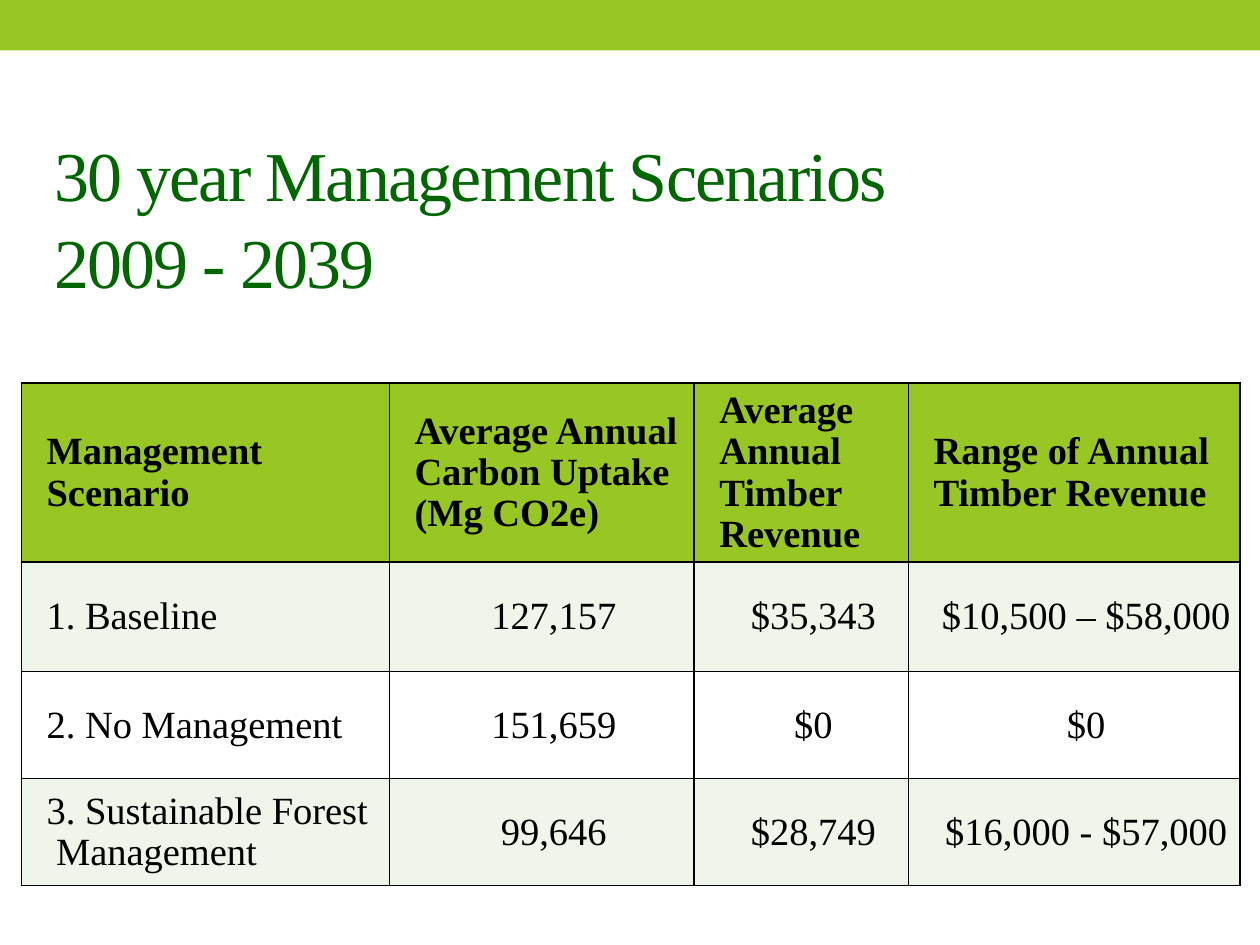
from dataclasses import dataclass

from lxml import etree
from pptx import Presentation
from pptx.dml.color import RGBColor
from pptx.enum import shapes, text
from pptx.oxml import ns
from pptx.util import Inches, Pt

GREEN = RGBColor(0x98, 0xC7, 0x23)
DARK = RGBColor(0x00, 0x66, 0x00)
PALE = RGBColor(0xEF, 0xF5, 0xE8)
WHITE = RGBColor(0xFF, 0xFF, 0xFF)
BLACK = RGBColor(0x00, 0x00, 0x00)
FONT = "Times New Roman"
WIDTHS = (2.92, 2.42, 1.7, 2.63)


@dataclass
class Row:
    height: float
    fill: RGBColor
    cells: tuple[str, ...]
    head: bool = False


ROWS = (
    Row(1.42, GREEN, (
        "Management Scenario",
        "Average Annual Carbon Uptake (Mg CO2e)",
        "Average Annual Timber Revenue",
        "Range of Annual Timber Revenue",
    ), True),
    Row(0.87, PALE, ("1. Baseline", "127,157", "$35,343", "$10,500 – $58,000")),
    Row(0.85, WHITE, ("2. No Management", "151,659", "$0", "$0")),
    Row(0.85, PALE, ("3. Sustainable Forest\v Management", "99,646", "$28,749",
                     "$16,000 - $57,000")),
)


def style(frame, size: float, color: RGBColor, bold: bool, pitch: float) -> None:
    for para in frame.paragraphs:
        para.line_spacing = pitch
        for run in para.runs:
            run.font.name = FONT
            run.font.size = Pt(size)
            run.font.bold = bold
            run.font.color.rgb = color


def add_band(slide) -> None:
    band = slide.shapes.add_shape(
        shapes.MSO_SHAPE.RECTANGLE, 0, 0, Inches(10), Inches(0.4))
    band.shadow.inherit = False
    band.fill.solid()
    band.fill.fore_color.rgb = GREEN
    band.line.fill.background()


def add_title(slide) -> None:
    title = slide.shapes.title
    title.left, title.top = Inches(0.33), Inches(1.17)
    title.width, title.height = Inches(9), Inches(1.08)
    frame = title.text_frame
    frame.text = "30 year Management Scenarios\v2009 - 2039"
    frame.vertical_anchor = text.MSO_ANCHOR.MIDDLE
    frame.auto_size = text.MSO_AUTO_SIZE.NONE
    style(frame, 40, DARK, False, 1.04)
    para = frame.paragraphs[0]
    para.alignment = text.PP_ALIGN.LEFT
    for run in para.runs:
        run.font._element.set("spc", "-100")


def add_edges(cell) -> None:
    props = cell._tc.get_or_add_tcPr()
    for side in ("lnL", "lnR", "lnT", "lnB"):
        line = etree.SubElement(props, ns.qn(f"a:{side}"), w=str(Pt(1)))
        fill = etree.SubElement(line, ns.qn("a:solidFill"))
        etree.SubElement(fill, ns.qn("a:srgbClr"), val=str(BLACK))


def fill_cell(cell, words: str, row: Row, center: bool) -> None:
    add_edges(cell)
    cell.fill.solid()
    cell.fill.fore_color.rgb = row.fill
    cell.margin_left = Inches(0.2)
    cell.margin_right = cell.margin_top = Inches(0.01)
    cell.margin_bottom = 0
    cell.vertical_anchor = text.MSO_ANCHOR.MIDDLE
    frame = cell.text_frame
    frame.text = words
    style(frame, 22, BLACK, row.head, 0.97)
    frame.paragraphs[0].alignment = (
        text.PP_ALIGN.CENTER if center else text.PP_ALIGN.LEFT)


def add_grid(slide) -> None:
    height = sum(row.height for row in ROWS)
    grid = slide.shapes.add_table(
        len(ROWS), len(WIDTHS), Inches(0.17), Inches(3.04),
        Inches(sum(WIDTHS)), Inches(height)).table
    for col, width in zip(grid.columns, WIDTHS):
        col.width = Inches(width)
    for i, row in enumerate(ROWS):
        grid.rows[i].height = Inches(row.height)
        for j, words in enumerate(row.cells):
            fill_cell(grid.cell(i, j), words, row, j > 0 and not row.head)


def main() -> None:
    deck = Presentation()
    deck.slide_width, deck.slide_height = Inches(10), Inches(7.5)
    slide = deck.slides.add_slide(deck.slide_layouts[5])
    add_band(slide)
    add_title(slide)
    add_grid(slide)
    deck.save("out.pptx")


if __name__ == "__main__":
    main()
